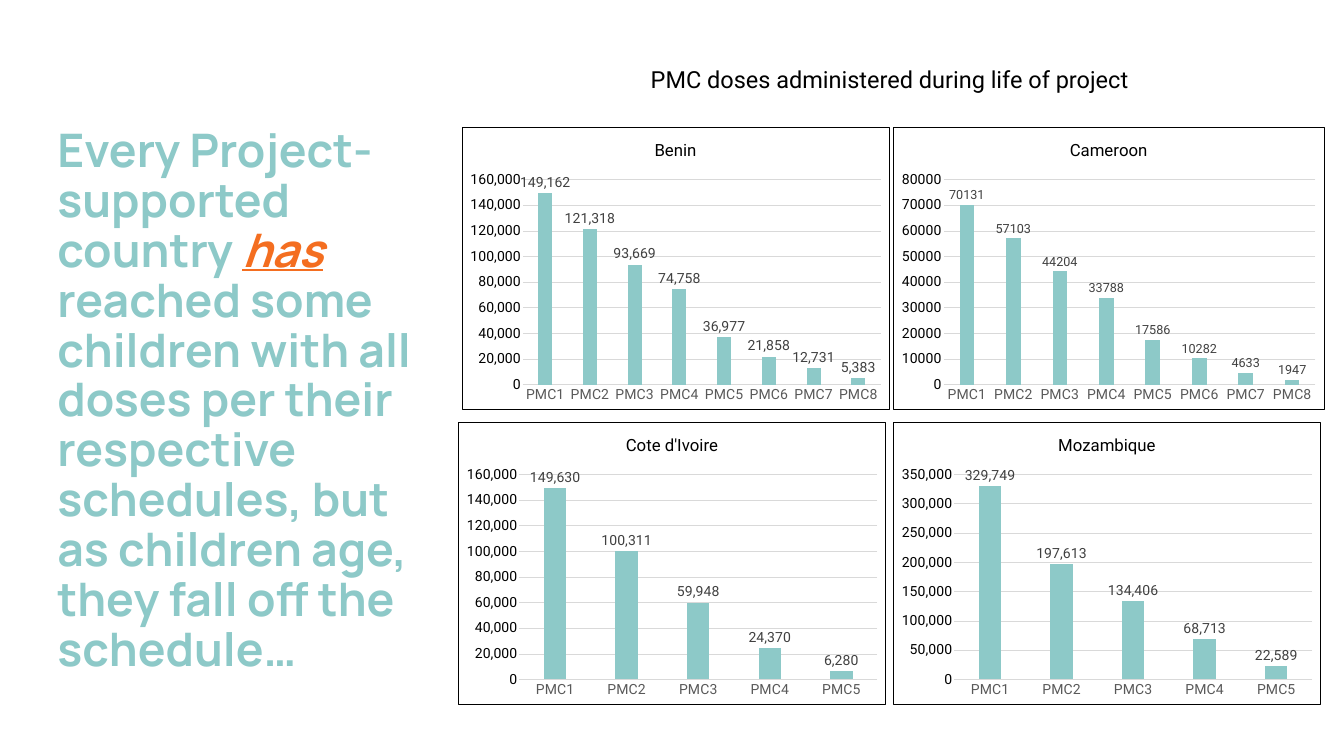
"""Builds a slide with a headline and four country charts of PMC doses."""
from dataclasses import dataclass

from lxml.etree import fromstring
from pptx import Presentation
from pptx.chart.data import CategoryChartData
from pptx.dml.color import RGBColor
from pptx.enum.chart import XL_CHART_TYPE, XL_LABEL_POSITION, XL_TICK_MARK
from pptx.enum.text import MSO_ANCHOR, PP_ALIGN
from pptx.oxml.ns import nsdecls, qn
from pptx.util import Pt

PX = 9144


@dataclass(frozen=True)
class Theme:
    teal: str = "8DC9C8"
    orange: str = "F46E20"
    black: str = "000000"
    dark: str = "404040"
    gray: str = "595959"
    rule: str = "D9D9D9"
    head: str = "Manrope"
    body: str = "Roboto"
    big: float = 66
    mid: float = 33.6
    title: float = 24
    axis: float = 20
    small: float = 18
    base: float = 10
    hair: float = 0.75


T = Theme()
SIZE = (2667, 1500)
CLAIM = [
    ("Every Project-supported country ", T.teal, False),
    ("has", T.orange, True),
    (" reached some children with all doses per their respective schedules, "
     "but as children age, they fall off the schedule…", T.teal, False),
]
TOPIC = [("PMC doses administered during life of project", T.black, False)]
COMMA = "#,##0"
CHARTS = [
    dict(name="Cote d'Ivoire", series="Series 1", box=(909, 837, 849, 560),
         top=160000, step=20000, form=COMMA, size=T.axis,
         vals=(149630, 100311, 59948, 24370, 6280)),
    dict(name="Benin", series="Series 1", box=(916, 252, 849, 560),
         top=160000, step=20000, form=COMMA, size=T.axis,
         vals=(149162, 121318, 93669, 74758, 36977, 21858, 12731, 5383)),
    dict(name="Mozambique", series="Series 1", box=(1772, 837, 849, 560),
         top=350000, step=50000, form=COMMA, size=T.axis,
         vals=(329749, 197613, 134406, 68713, 22589)),
    dict(name="Cameroon", series="Cameroon", box=(1772, 252, 856, 560),
         top=80000, step=10000, form="General", size=T.small,
         vals=(70131, 57103, 44204, 33788, 17586, 10282, 4633, 1947)),
]


def emu(box):
    return [n * PX for n in box]


def style(font, size, color, face=T.body):
    font.size = Pt(size)
    font.name = face
    font.bold = False
    font.color.rgb = RGBColor.from_string(color)


def stroke(line, color):
    line.width = Pt(T.hair)
    line.color.rgb = RGBColor.from_string(color)


def add_text(slide, box, runs, size, face, bold, align):
    frame = slide.shapes.add_textbox(*emu(box)).text_frame
    frame.word_wrap = True
    frame.vertical_anchor = MSO_ANCHOR.MIDDLE
    para = frame.paragraphs[0]
    para.alignment = align
    para.line_spacing = 0.9
    para.space_after = Pt(6)
    for words, color, stress in runs:
        run = para.add_run()
        run.text = words
        style(run.font, size, color, face)
        run.font.bold = bold
        run.font.italic = run.font.underline = stress


def add_frame(chart):
    width = int(Pt(T.hair))
    frame = fromstring(
        f'<c:spPr {nsdecls("c", "a")}><a:noFill/><a:ln w="{width}"><a:solidFill>'
        f'<a:srgbClr val="{T.black}"/></a:solidFill></a:ln></c:spPr>')
    chart.element.find(qn("c:chart")).addnext(frame)


def set_axes(chart, item):
    cat, val = chart.category_axis, chart.value_axis
    for axis, color in ((cat, T.gray), (val, T.black)):
        axis.major_tick_mark = axis.minor_tick_mark = XL_TICK_MARK.NONE
        style(axis.tick_labels.font, T.axis, color)
    cat.has_major_gridlines = False
    stroke(cat.format.line, T.rule)
    val.format.line.fill.background()
    val.has_major_gridlines = True
    stroke(val.major_gridlines.format.line, T.rule)
    val.minimum_scale = 0
    val.maximum_scale = item["top"]
    val.major_unit = item["step"]
    val.tick_labels.number_format = item["form"]
    val.tick_labels.number_format_is_linked = False


def set_bars(plot, item):
    plot.gap_width = 219
    plot.overlap = -27
    plot.vary_by_categories = False
    fill = plot.series[0].format.fill
    fill.solid()
    fill.fore_color.rgb = RGBColor.from_string(T.teal)
    plot.has_data_labels = True
    labels = plot.data_labels
    labels.show_value = True
    labels.position = XL_LABEL_POSITION.OUTSIDE_END
    labels.number_format = item["form"]
    labels.number_format_is_linked = False
    style(labels.font, item["size"], T.dark)


def add_doses(slide, item):
    data = CategoryChartData(number_format=item["form"])
    data.categories = [f"PMC{n + 1}" for n in range(len(item["vals"]))]
    data.add_series(item["series"], item["vals"])
    chart = slide.shapes.add_chart(
        XL_CHART_TYPE.COLUMN_CLUSTERED, *emu(item["box"]), data).chart
    style(chart.font, T.base, T.black)
    chart.has_legend = False
    chart.has_title = True
    chart.chart_title.include_in_layout = False
    run = chart.chart_title.text_frame.paragraphs[0].add_run()
    run.text = item["name"]
    style(run.font, T.title, T.black)
    set_axes(chart, item)
    set_bars(chart.plots[0], item)
    add_frame(chart)


def main():
    deck = Presentation()
    deck.slide_width, deck.slide_height = emu(SIZE)
    slide = deck.slides.add_slide(deck.slide_layouts[6])
    add_text(slide, (104, 292, 790, 1011), CLAIM, T.big, T.head, True, PP_ALIGN.LEFT)
    add_text(slide, (909, 100, 1713, 121), TOPIC, T.mid, T.body, False, PP_ALIGN.CENTER)
    for item in CHARTS:
        add_doses(slide, item)
    deck.save("out.pptx")


if __name__ == "__main__":
    main()
